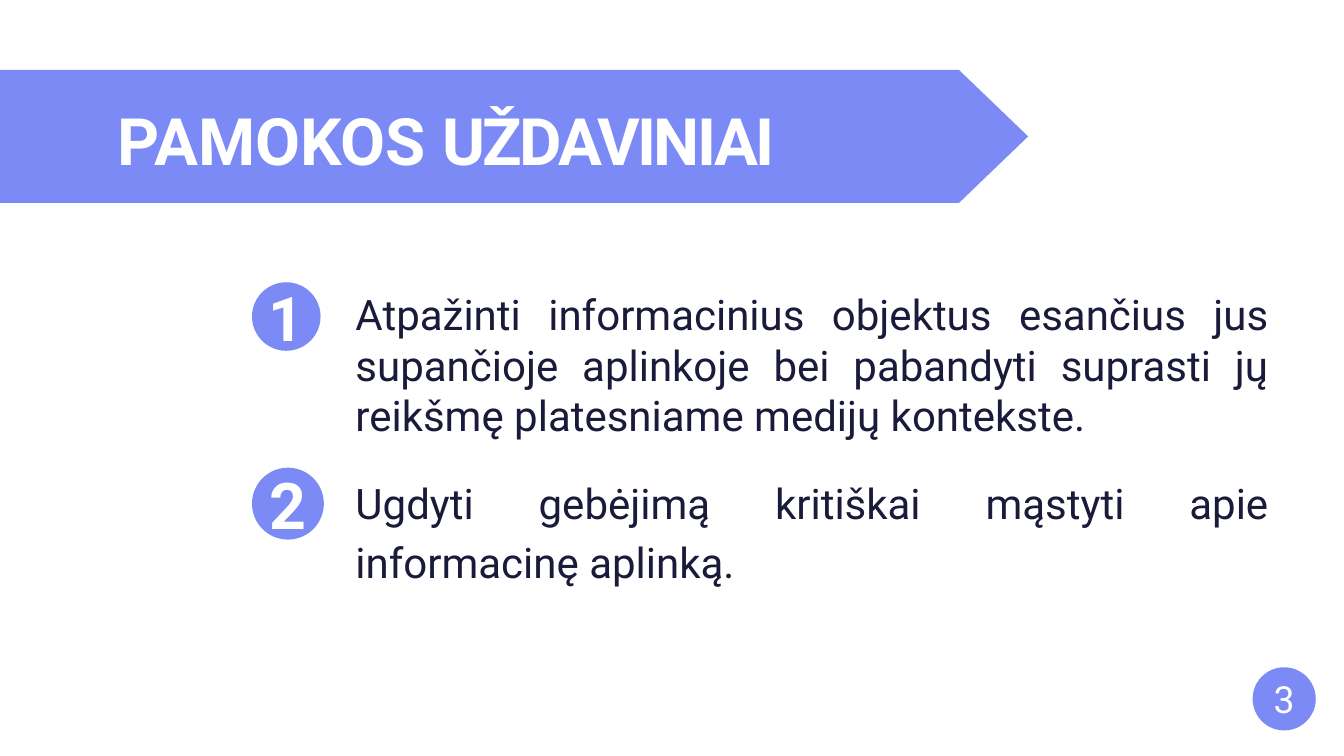
import collections
import dataclasses

import pptx
import pptx.dml.color
import pptx.enum.shapes
import pptx.enum.text
import pptx.util

PX = 9144
SHAPE = pptx.enum.shapes.MSO_SHAPE
ALIGN = pptx.enum.text.PP_ALIGN
ANCHOR = pptx.enum.text.MSO_ANCHOR
Box = collections.namedtuple("Box", "x y w h")


@dataclasses.dataclass(frozen=True)
class Theme:
    font: str = "Roboto"
    accent: str = "7B8AF5"
    ink: str = "1A1A3A"
    white: str = "FFFFFF"
    title: int = 70
    body: int = 45
    page: int = 40


THEME = Theme()


def rgb(value):
    return pptx.dml.color.RGBColor.from_string(value)


def emu(box):
    return [pptx.util.Emu(v * PX) for v in box]


def add_shape(s, kind, box):
    sp = s.shapes.add_shape(kind, *emu(box))
    sp.shadow.inherit = False
    sp.fill.solid()
    sp.fill.fore_color.rgb = rgb(THEME.accent)
    sp.line.fill.background()
    return sp


def write(sp, runs, size, color, bold=False, align=ALIGN.LEFT,
          anchor=ANCHOR.TOP, wrap=True, before=0, spacing=None):
    tf = sp.text_frame
    tf.word_wrap = wrap
    tf.vertical_anchor = anchor
    tf.margin_left = tf.margin_right = tf.margin_top = tf.margin_bottom = 0
    p = tf.paragraphs[0]
    p.alignment = align
    p.space_before = pptx.util.Pt(before)
    if spacing:
        p.line_spacing = spacing
    for text, tracking in runs:
        r = p.add_run()
        r.text = text
        r.font.name = THEME.font
        r.font.size = pptx.util.Pt(size)
        r.font.bold = bold
        r.font.color.rgb = rgb(color)
        if tracking:
            r._r.get_or_add_rPr().set("spc", str(tracking))


def add_badge(s, box, label, size, bold):
    sp = add_shape(s, SHAPE.OVAL, box)
    write(sp, [(label, 0)], size, THEME.white, bold=bold,
          align=ALIGN.CENTER, anchor=ANCHOR.MIDDLE, wrap=False)


def add_banner(s, box, runs):
    sp = add_shape(s, SHAPE.PENTAGON, box)
    sp.adjustments[0] = 0.52
    title = s.shapes.add_textbox(*emu(Box(box.x + 175, box.y + 45, 1125, 119)))
    write(title, runs, THEME.title, THEME.white, bold=True, before=1)


def add_objective(s, box, label, text, badge, size, drop, spacing):
    add_badge(s, Box(box.x, box.y, badge, badge), label, size, True)
    body = Box(box.x + 154, box.y + drop, box.w - 154, box.h - drop)
    write(s.shapes.add_textbox(*emu(body)), [(text, 0)], THEME.body, THEME.ink,
          align=ALIGN.JUSTIFY, before=1, spacing=spacing)


def main():
    prs = pptx.Presentation()
    prs.slide_width, prs.slide_height = emu((2000, 1125))
    s = prs.slides.add_slide(prs.slide_layouts[6])
    s.background.fill.solid()
    s.background.fill.fore_color.rgb = rgb(THEME.white)

    add_banner(s, Box(0, 104, 1530, 198), [("PAMOKOS ", 0), ("UŽDAVINIAI", -290)])
    add_objective(
        s, Box(375, 420, 1513, 239), "1",
        "Atpažinti informacinius objektus esančius jus supančioje aplinkoje "
        "bei pabandyti suprasti jų reikšmę platesniame medijų kontekste.",
        badge=102, size=66, drop=10, spacing=None)
    add_objective(
        s, Box(375, 696, 1513, 171), "2",
        "Ugdyti gebėjimą kritiškai mąstyti apie informacinę aplinką.",
        badge=107, size=69, drop=2, spacing=1.17)
    add_badge(s, Box(1864, 993, 94, 94), "3", THEME.page, False)

    prs.save("out.pptx")


if __name__ == "__main__":
    main()
